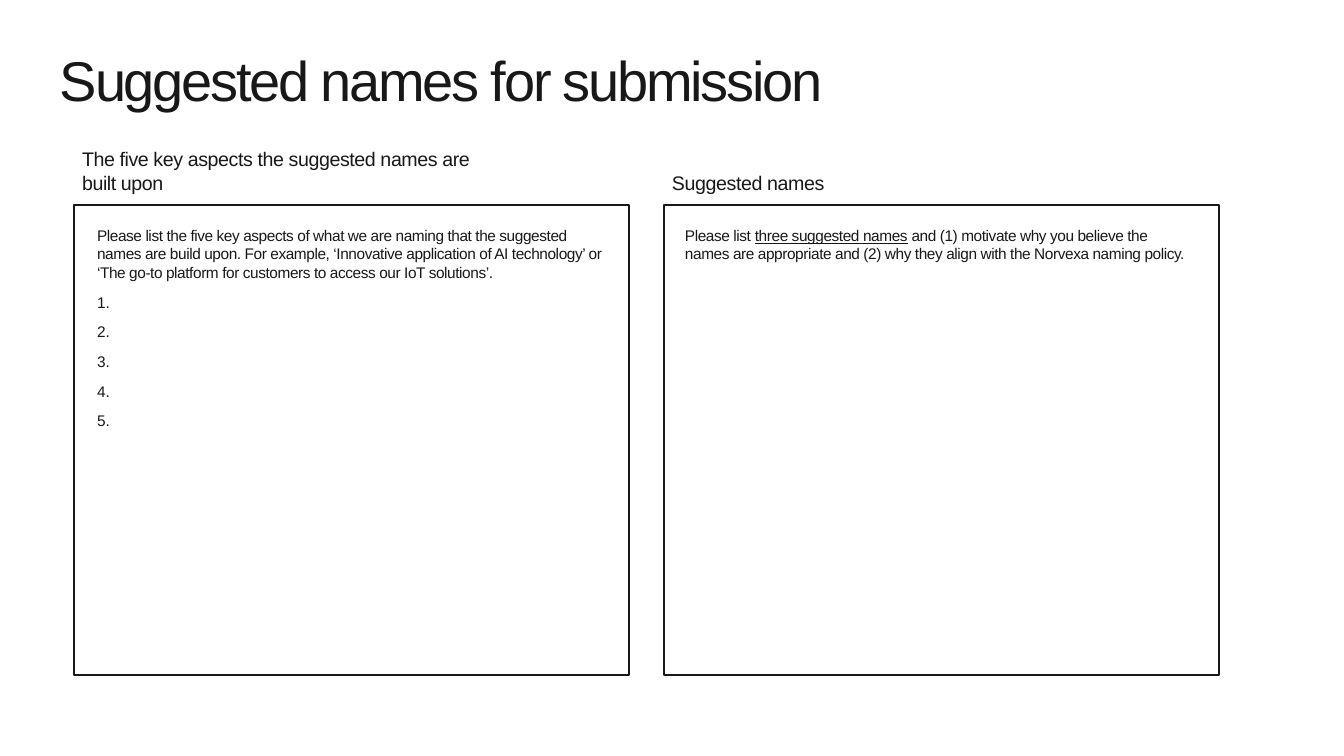
from lxml import etree
from pptx import Presentation
from pptx.dml.color import RGBColor
from pptx.enum.shapes import MSO_SHAPE
from pptx.enum.text import MSO_ANCHOR, MSO_AUTO_SIZE
from pptx.oxml.ns import qn
from pptx.util import Pt

PX = 914400 / 100.8
INK = RGBColor(0x18, 0x18, 0x18)
RECT = MSO_SHAPE.RECTANGLE
BOTTOM = MSO_ANCHOR.BOTTOM
GROW = MSO_AUTO_SIZE.SHAPE_TO_FIT_TEXT

TITLE = {"size": Pt(40), "tracking": -160}
HEADING = {"size": Pt(14), "tracking": -30}
BODY = {"size": Pt(11), "tracking": -30}
PANEL_X = (74, 664)


def emu(*lengths):
    return [round(n * PX) for n in lengths]


class Sheet:
    def __init__(self, prs):
        self.s = prs.slides.add_slide(prs.slide_layouts[6])
        self.font = {"name": "Arial"}
        self.color = INK

    def run(self, p, text, style, underline=None):
        r = p.add_run()
        r.text = text
        values = {**self.font, "size": style["size"], "underline": underline}
        for key, value in values.items():
            setattr(r.font, key, value)
        r.font.color.rgb = self.color
        r._r.get_or_add_rPr().set("spc", str(style["tracking"]))

    def text(self, box, runs, style, **frame):
        """Add a text box; runs is a list of (text, underline) pairs."""
        tf = self.s.shapes.add_textbox(*emu(*box)).text_frame
        margins = dict(zip(("margin_left", "margin_top", "margin_right", "margin_bottom"),
                           emu(8, 4, 8, 4)))
        for key, value in {"word_wrap": True, **margins, **frame}.items():
            setattr(tf, key, value)
        for text, underline in runs:
            self.run(tf.paragraphs[0], text, style, underline)
        return tf

    def numbered(self, tf, count, style):
        """Append numbered lines left open for the reader to fill in."""
        for _ in range(count):
            p = tf.add_paragraph()
            pPr = p._p.get_or_add_pPr()
            pPr.set("marL", "228600")
            pPr.set("indent", "-228600")
            clr = etree.SubElement(pPr, qn("a:buClr"))
            etree.SubElement(clr, qn("a:srgbClr"), val=str(self.color))
            etree.SubElement(pPr, qn("a:buAutoNum"), type="arabicPeriod")
            p.space_before = Pt(8)
            self.run(p, " ", style)

    def panel(self, box):
        sp = self.s.shapes.add_shape(RECT, *emu(*box))
        sp.shadow.inherit = False
        sp.fill.background()
        sp.line.color.rgb = self.color
        sp.line.width = Pt(1)


def main():
    prs = Presentation()
    prs.slide_width, prs.slide_height = emu(1344, 756)
    sheet = Sheet(prs)

    title = sheet.text((52, 52, 921, 119), [("Suggested names for submission", None)], TITLE)
    title.paragraphs[0].line_spacing = 0.85

    headings = ("The five key aspects the suggested names are built upon", "Suggested names")
    for x, width, heading in zip(PANEL_X, (421, 462), headings):
        sheet.text((x, 163, width, 35), [(heading, None)], HEADING,
                   word_wrap=False, auto_size=GROW, vertical_anchor=BOTTOM)
        sheet.panel((x, 205, 555, 470))

    aspects = sheet.text((89, 222, 523, 145), [
        ("Please list the five key aspects of what we are naming that the suggested names "
         "are build upon. For example, ‘Innovative application of AI technology’ or "
         "‘The go-to platform for customers to access our IoT solutions’.", None)], BODY)
    sheet.numbered(aspects, 5, BODY)

    sheet.text((677, 222, 517, 101), [
        ("Please list ", None),
        ("three suggested names", True),
        (" and (1) motivate why you believe the names are appropriate and "
         "(2) why they align with the Norvexa naming policy.", None)], BODY)

    prs.save("out.pptx")


if __name__ == "__main__":
    main()
